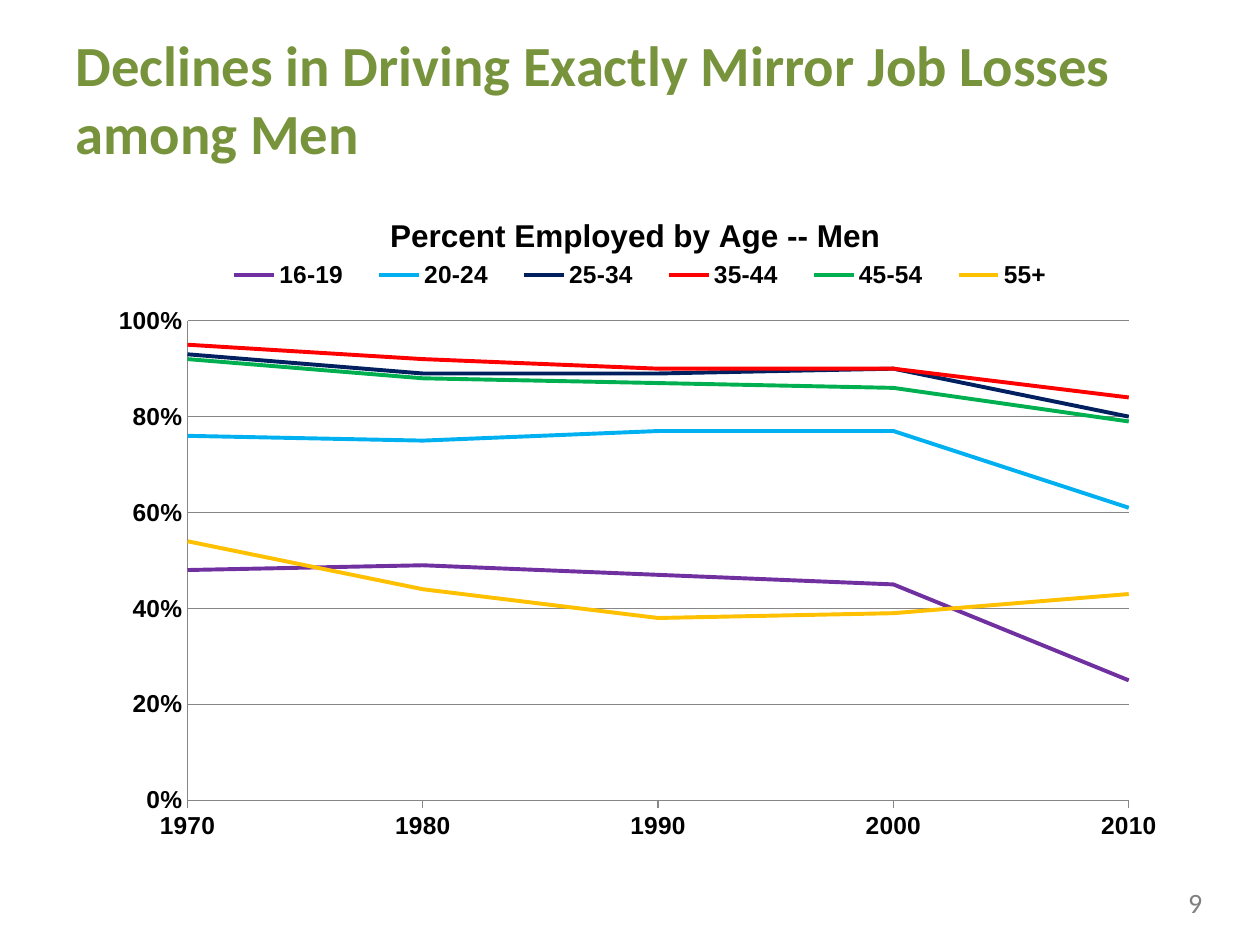
from lxml import etree
from pptx import Presentation
from pptx import util as u
from pptx.chart.data import CategoryChartData
from pptx.dml.color import RGBColor
from pptx.enum import chart as ch, text
from pptx.oxml import ns

GREEN = RGBColor(0x77, 0x93, 0x3C)
GRAY = RGBColor(0x80, 0x80, 0x80)
AXIS_GRAY = RGBColor(0x86, 0x86, 0x86)
BLACK = RGBColor(0, 0, 0)

YEARS = ["1970", "1980", "1990", "2000", "2010"]
EMPLOYMENT = [
    ("16-19", [0.48, 0.49, 0.47, 0.45, 0.25], RGBColor(0x70, 0x30, 0xA0)),
    ("20-24", [0.76, 0.75, 0.77, 0.77, 0.61], RGBColor(0x00, 0xB0, 0xF0)),
    ("25-34", [0.93, 0.89, 0.89, 0.90, 0.80], RGBColor(0x00, 0x20, 0x60)),
    ("35-44", [0.95, 0.92, 0.90, 0.90, 0.84], RGBColor(0xFF, 0x00, 0x00)),
    ("45-54", [0.92, 0.88, 0.87, 0.86, 0.79], RGBColor(0x00, 0xB0, 0x50)),
    ("55+", [0.54, 0.44, 0.38, 0.39, 0.43], RGBColor(0xFF, 0xC0, 0x00)),
]


class Deck:
    """Holds the style and the current slide, and adds its elements."""

    heading_font = "Calibri"
    chart_font = "Arial"

    def __init__(self):
        self.prs = Presentation()
        self.prs.slide_width, self.prs.slide_height = u.Cm(25.4), u.Cm(19.05)
        self.slide = self.prs.slides.add_slide(self.prs.slide_layouts[5])

    def style(self, font, name, size, color, bold=False):
        font.name, font.size, font.bold = name, u.Pt(size), bold
        font.color.rgb = color

    def title(self, wording, left, top, width, height):
        heading = self.slide.shapes.title
        heading.left, heading.top = u.Cm(left), u.Cm(top)
        heading.width, heading.height = u.Cm(width), u.Cm(height)
        frame = heading.text_frame
        frame.text = wording
        frame.vertical_anchor = text.MSO_ANCHOR.MIDDLE
        frame.paragraphs[0].alignment = text.PP_ALIGN.LEFT
        self.style(frame.paragraphs[0].runs[0].font, self.heading_font, 32.4, GREEN, True)

    def page_number(self, number, left, top, width, height):
        box = self.slide.shapes.add_textbox(u.Cm(left), u.Cm(top), u.Cm(width), u.Cm(height))
        frame = box.text_frame
        frame.word_wrap = True
        frame.text = number
        self.style(frame.paragraphs[0].runs[0].font, self.heading_font, 16, GRAY)

    def place(self, part, index, **layout):
        for old in part.findall(ns.qn("c:layout")):
            part.remove(old)
        outer = etree.Element(ns.qn("c:layout"))
        manual = etree.SubElement(outer, ns.qn("c:manualLayout"))
        for tag, value in layout.items():
            etree.SubElement(manual, ns.qn(f"c:{tag}")).set("val", str(value))
        part.insert(index, outer)

    def axis(self, axis, tick):
        self.style(axis.tick_labels.font, self.chart_font, 14, BLACK, True)
        axis.major_tick_mark = tick
        axis.minor_tick_mark = ch.XL_TICK_MARK.NONE
        axis.format.line.color.rgb = AXIS_GRAY
        axis.format.line.width = u.Pt(0.75)

    def line_chart(self, wording, categories, groups, left, top, width, height):
        data = CategoryChartData(number_format="0%")
        data.categories = categories
        for name, values, _ in groups:
            data.add_series(name, values)
        chart = self.slide.shapes.add_chart(
            ch.XL_CHART_TYPE.LINE, u.Cm(left), u.Cm(top), u.Cm(width), u.Cm(height), data
        ).chart
        self.style(chart.font, self.heading_font, 10, BLACK)

        chart.has_title = True
        caption = chart.chart_title
        caption.text_frame.text = wording
        self.style(caption.text_frame.paragraphs[0].runs[0].font, self.chart_font, 18, BLACK, True)
        self.place(caption._element, 1, xMode="edge", yMode="edge", x=0.28, y=0.06)

        chart.has_legend = True
        chart.legend.position = ch.XL_LEGEND_POSITION.TOP
        chart.legend.include_in_layout = False
        self.style(chart.legend.font, self.chart_font, 14, BLACK, True)
        self.place(chart.legend._element, 1, xMode="edge", yMode="edge",
                   x=0.12, y=0.12, w=0.78, h=0.07)

        self.axis(chart.category_axis, ch.XL_TICK_MARK.OUTSIDE)
        percent = chart.value_axis
        self.axis(percent, ch.XL_TICK_MARK.NONE)
        percent.minimum_scale, percent.maximum_scale, percent.major_unit = 0, 1, 0.2
        percent.tick_labels.number_format = "0%"
        percent.tick_labels.number_format_is_linked = False
        percent.has_major_gridlines = True
        percent.major_gridlines.format.line.color.rgb = AXIS_GRAY
        percent.major_gridlines.format.line.width = u.Pt(0.75)

        plot_area = chart._chartSpace.chart.plotArea
        self.place(plot_area, 0, layoutTarget="inner", xMode="edge", yMode="edge",
                   x=0.103, y=0.221, w=0.846, h=0.692)
        cross = percent._element.find(ns.qn("c:crossBetween"))
        if cross is None:
            cross = etree.Element(ns.qn("c:crossBetween"))
            percent._element.find(ns.qn("c:majorUnit")).addprevious(cross)
        cross.set("val", "midCat")

        chart.plots[0].vary_by_categories = False
        for series, (_, _, color) in zip(chart.plots[0].series, groups):
            series.smooth = False
            series.marker.style = ch.XL_MARKER_STYLE.NONE
            series.format.line.color.rgb = color
            series.format.line.width = u.Pt(2.25)


def main():
    deck = Deck()
    deck.title("Declines in Driving Exactly Mirror Job Losses among Men", 1.27, 0.76, 22.86, 2.41)
    deck.line_chart("Percent Employed by Age -- Men", YEARS, EMPLOYMENT, 1.47, 3.38, 22.43, 13.97)
    deck.page_number("9", 23.7, 17.73, 1.27, 0.94)
    deck.prs.save("out.pptx")


if __name__ == "__main__":
    main()
